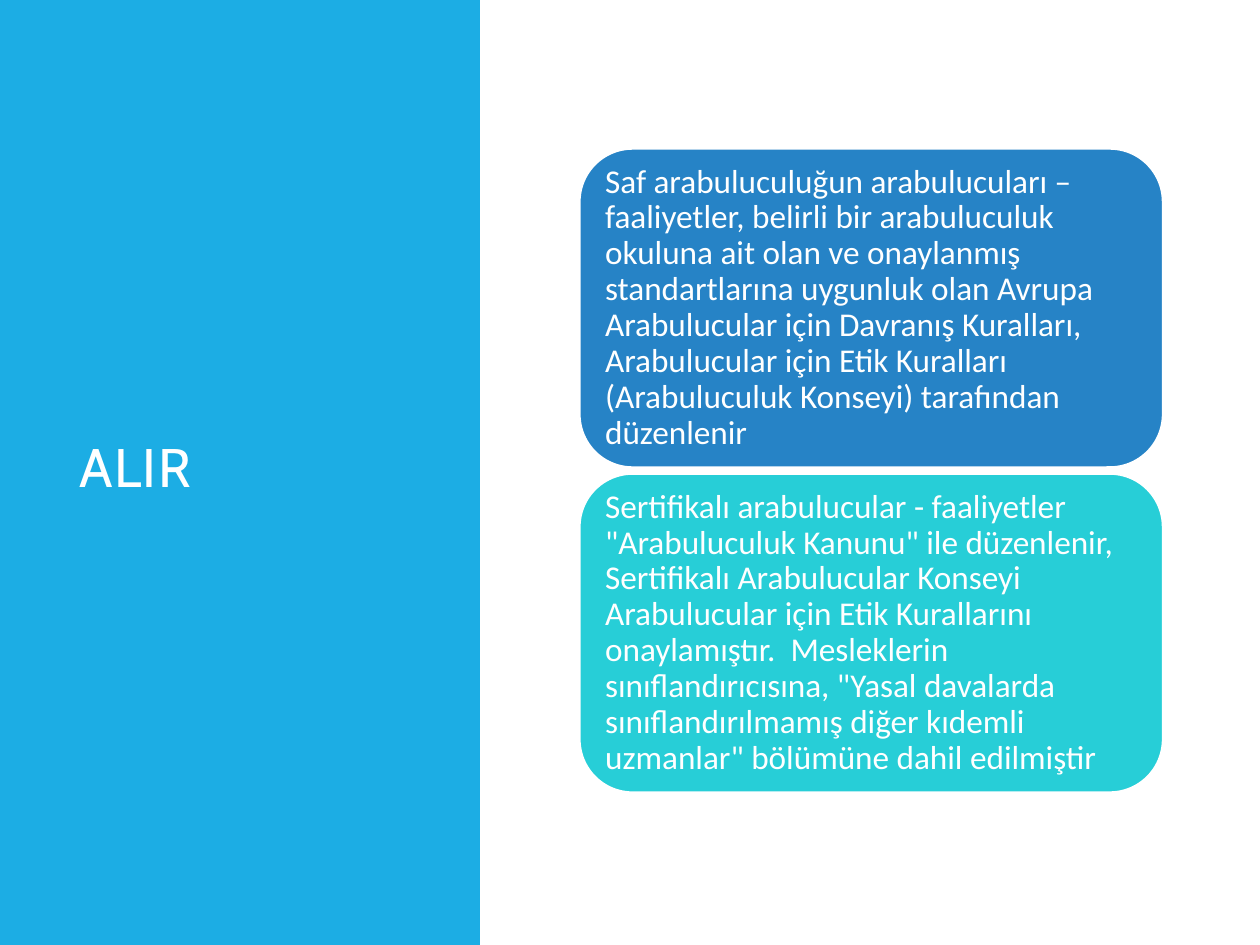
import pptx
import pptx.util
from pptx.dml.color import RGBColor
from pptx.enum.shapes import MSO_SHAPE
from pptx.enum.text import MSO_ANCHOR, PP_ALIGN
from pptx.util import Inches

WHITE = RGBColor(0xFF, 0xFF, 0xFF)
SKY = RGBColor(0x1C, 0xAD, 0xE4)
BLUE = RGBColor(0x26, 0x83, 0xC6)
TURQUOISE = RGBColor(0x27, 0xCE, 0xD7)

CARDS = [
    (BLUE, "Saf arabuluculuğun arabulucuları – faaliyetler, belirli bir "
           "arabuluculuk okuluna ait olan ve onaylanmış standartlarına uygunluk "
           "olan Avrupa Arabulucular için Davranış Kuralları, Arabulucular için "
           "Etik Kuralları (Arabuluculuk Konseyi) tarafından düzenlenir"),
    (TURQUOISE, 'Sertifikalı arabulucular - faaliyetler "Arabuluculuk Kanunu" ile '
                "düzenlenir, Sertifikalı Arabulucular Konseyi Arabulucular için "
                "Etik Kurallarını onaylamıştır.  Mesleklerin sınıflandırıcısına, "
                '"Yasal davalarda sınıflandırılmamış diğer kıdemli uzmanlar" '
                "bölümüne dahil edilmiştir"),
]
CARD_TOP, CARD_HEIGHT, CARD_GAP = 1.18, 2.53, 0.05


class SlideBuilder:
    TITLE = {"name": "Cabin", "size": pptx.util.Pt(31)}
    BODY = {"name": "Calibri", "size": pptx.util.Pt(19)}

    def __init__(self, slide):
        self.s = slide

    def add_text(self, tf, text, font, line_spacing):
        """Put one white, left-aligned, vertically centred paragraph in a frame."""
        tf.word_wrap = True
        tf.vertical_anchor = MSO_ANCHOR.MIDDLE
        p = tf.paragraphs[0]
        p.alignment = PP_ALIGN.LEFT
        p.line_spacing = line_spacing
        r = p.add_run()
        r.text = text
        for key, value in font.items():
            setattr(r.font, key, value)
        r.font.color.rgb = WHITE
        return r

    def shape(self, kind, box, fill):
        sp = self.s.shapes.add_shape(kind, *map(Inches, box))
        sp.shadow.inherit = False
        sp.fill.solid()
        sp.fill.fore_color.rgb = fill
        sp.line.fill.background()
        return sp

    def panel(self, box, fill):
        self.shape(MSO_SHAPE.RECTANGLE, box, fill)

    def title(self, box, text):
        sp = self.s.shapes.add_textbox(*map(Inches, box))
        r = self.add_text(sp.text_frame, text, self.TITLE, 0.8)
        r._r.get_or_add_rPr().set("spc", "100")

    def card(self, box, fill, text):
        sp = self.shape(MSO_SHAPE.ROUNDED_RECTANGLE, box, fill)
        sp.line.color.rgb = WHITE
        sp.line.width = pptx.util.Pt(1.25)
        tf = sp.text_frame
        for side in ("left", "top", "right", "bottom"):
            setattr(tf, f"margin_{side}", Inches(0.08))
        self.add_text(tf, text, self.BODY, 0.9)


def main():
    prs = pptx.Presentation()
    prs.slide_width, prs.slide_height = Inches(10), Inches(7.5)
    builder = SlideBuilder(prs.slides.add_slide(prs.slide_layouts[6]))
    builder.panel((0, 0, 3.81, 7.5), SKY)
    builder.title((0.53, 0.7, 2.8, 6.09), "ALIR")
    for i, (fill, text) in enumerate(CARDS):
        top = CARD_TOP + i * (CARD_HEIGHT + CARD_GAP)
        builder.card((4.6, top, 4.63, CARD_HEIGHT), fill, text)
    prs.save("out.pptx")


if __name__ == "__main__":
    main()
